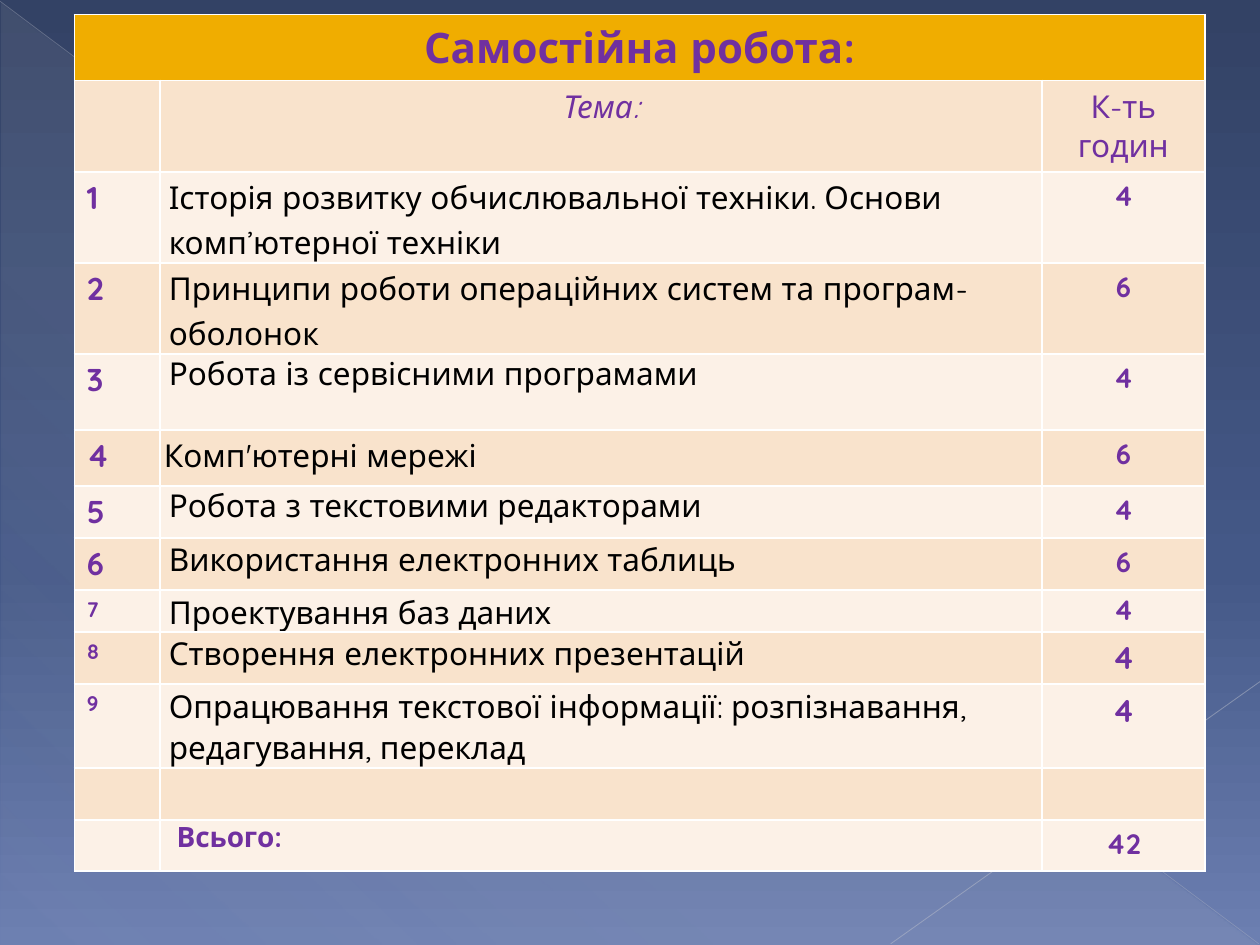
from lxml.etree import SubElement
from pptx import Presentation
from pptx.dml.color import RGBColor
from pptx.enum.shapes import MSO_CONNECTOR, MSO_SHAPE
from pptx.enum.text import PP_ALIGN
from pptx.oxml.ns import qn
from pptx.util import Pt

FONT = "Quicksand"
COLORS = {"header": "F0AD00", "dark_band": "F9E3CC", "light_band": "FCF1E7",
          "accent": "7030A0", "text": "000000", "border": "FFFFFF"}
BACKGROUND = [(0, "334265", 100), (60, "445887", 100), (100, "6C7FB1", 100)]
SHEEN = [(0, "D4D4D6", 10), (70, "D4D4D6", 8), (100, "D4D4D6", 1)]
# start x, start y, end x, end y, colour, width, opacity
RAYS = [(0, 0.7, 719.3, 539.3, "B9BDC8", 0.39, 35),
        (720, 389.5, 509, 539.3, "C1C4CE", 0.47, 45)]

TABLE_LEFT, TABLE_TOP = 42.5, 8.4
COL_WIDTHS = [49, 504, 93]
TITLE = "Самостійна робота:"
HEADINGS = ["", "Тема:", "К-ть годин"]
TIGHT = {"margin_x": 5, "margin_y": 0}
LOOSE = {**TIGHT, "line_spacing": 1.15}
SPACED = {**TIGHT, "line_spacing": 1.06, "space_after": Pt(8)}
INSET = {**LOOSE, "margin_x": 2.2, "space_after": Pt(10)}
# row height, number size, topic, topic format, hours, hours format
TOPICS = [
    (52, 18, "Історія розвитку обчислювальної техніки. Основи комп’ютерної техніки",
     LOOSE, 4, {"size": 16}),
    (52, 18, "Принципи роботи операційних систем та програм-оболонок",
     LOOSE, 6, {"size": 16}),
    (43.4, 18, "Робота із сервісними програмами", TIGHT, 4, {"size": 16}),
    (32, 18, "Комп'ютерні мережі", INSET, 6, {"size": 16}),
    (29.7, 18, "Робота з текстовими редакторами", TIGHT, 4, {"size": 16}),
    (29.7, 18, "Використання електронних таблиць", SPACED, 6, {"size": 16}),
    (23.8, 12, "Проектування баз даних", SPACED, 4, {**SPACED, "size": 16}),
    (29.7, 12, "Створення електронних презентацій", SPACED, 4, {}),
    (47.8, 12, "Опрацювання текстової інформації: розпізнавання, редагування, переклад",
     SPACED, 4, {}),
]
TOTAL_LABEL = "Всього:"
TITLE_HEIGHT, HEADING_HEIGHT, GAP_HEIGHT, TOTAL_HEIGHT = 37.6, 52, 29.7, 28


def add_color(parent, color, opacity):
    clr = SubElement(parent, qn("a:srgbClr"), val=color)
    if opacity < 100:
        SubElement(clr, qn("a:alpha"), val=str(opacity * 1000))


def set_gradient(fill, holder, stops, angle):
    """Give the fill inside the holder element its stops and clockwise angle."""
    fill.gradient()
    grad = holder.find(".//" + qn("a:gradFill"))
    for child in list(grad):
        grad.remove(child)
    gs_list = SubElement(grad, qn("a:gsLst"))
    for pos, color, opacity in stops:
        add_color(SubElement(gs_list, qn("a:gs"), pos=str(pos * 1000)), color, opacity)
    SubElement(grad, qn("a:lin"), ang=str(angle * 60000), scaled="0")


def add_ray(s, x1, y1, x2, y2, color, width, opacity):
    ray = s.shapes.add_connector(MSO_CONNECTOR.STRAIGHT, Pt(x1), Pt(y1), Pt(x2), Pt(y2))
    ray.line.width = Pt(width)
    ray.line.fill.solid()
    ray.line.fill.fore_color.rgb = RGBColor.from_string(color)
    clr = ray.element.spPr.find(".//" + qn("a:srgbClr"))
    SubElement(clr, qn("a:alpha"), val=str(opacity * 1000))
    SubElement(ray.element.spPr, qn("a:effectLst"))


def style_cell(cell, fill):
    tc_pr = cell._tc.get_or_add_tcPr()
    for side in ("lnL", "lnR", "lnT", "lnB"):
        ln = SubElement(tc_pr, qn("a:" + side), w=str(Pt(1)))
        add_color(SubElement(ln, qn("a:solidFill")), COLORS["border"], 100)
    cell.fill.solid()
    cell.fill.fore_color.rgb = RGBColor.from_string(COLORS[fill])


def write(cell, text, size=18, color="accent", bold=False, italic=False,
          margin_x=7.2, margin_y=3.6, indent=0, **paragraph):
    cell.margin_left, cell.margin_right = Pt(margin_x + indent), Pt(margin_x)
    cell.margin_top = cell.margin_bottom = Pt(margin_y)
    p = cell.text_frame.paragraphs[0]
    for name, value in paragraph.items():
        setattr(p, name, value)
    r = p.add_run()
    r.text = str(text)
    font = {"name": FONT, "size": Pt(size), "bold": bold, "italic": italic}
    for name, value in font.items():
        setattr(r.font, name, value)
    r.font.color.rgb = RGBColor.from_string(COLORS[color])


def add_topic_table(s):
    heights = [TITLE_HEIGHT, HEADING_HEIGHT, *(t[0] for t in TOPICS),
               GAP_HEIGHT, TOTAL_HEIGHT]
    table = s.shapes.add_table(len(heights), len(COL_WIDTHS), Pt(TABLE_LEFT), Pt(TABLE_TOP),
                               Pt(sum(COL_WIDTHS)), Pt(sum(heights))).table
    for column, width in zip(table.columns, COL_WIDTHS):
        column.width = Pt(width)
    for i, height in enumerate(heights):
        table.rows[i].height = Pt(height)
        band = "header" if i == 0 else ("light_band", "dark_band")[i % 2]
        for j in range(len(COL_WIDTHS)):
            style_cell(table.cell(i, j), band)

    centred = {"alignment": PP_ALIGN.CENTER}
    table.cell(0, 0).merge(table.cell(0, 2))
    write(table.cell(0, 0), TITLE, size=24, bold=True, **centred)
    for j, heading in enumerate(HEADINGS):
        if heading:
            write(table.cell(1, j), heading, italic=j == 1, **centred)
    for n, (_, size, topic, topic_format, hours, hours_format) in enumerate(TOPICS, 1):
        row = n + 1
        write(table.cell(row, 0), n, size=size, bold=True)
        write(table.cell(row, 1), topic, color="text", **topic_format)
        write(table.cell(row, 2), hours, bold=True, **centred, **hours_format)
    last = len(heights) - 1
    write(table.cell(last, 1), TOTAL_LABEL, size=16, bold=True, indent=4.5, **TIGHT)
    write(table.cell(last, 2), sum(t[4] for t in TOPICS), size=16, bold=True, **centred)


def main():
    prs = Presentation()
    prs.slide_width, prs.slide_height = Pt(720), Pt(540)
    s = prs.slides.add_slide(prs.slide_layouts[6])
    set_gradient(s.background.fill, s.element, BACKGROUND, 90)
    sheen = s.shapes.add_shape(MSO_SHAPE.RIGHT_TRIANGLE, Pt(0.7), Pt(1.4), Pt(718.6), Pt(538.6))
    sheen.shadow.inherit = False
    sheen.line.fill.background()
    set_gradient(sheen.fill, sheen.element.spPr, SHEEN, 133)
    for ray in RAYS:
        add_ray(s, *ray)
    add_topic_table(s)
    prs.save("out.pptx")


if __name__ == "__main__":
    main()
